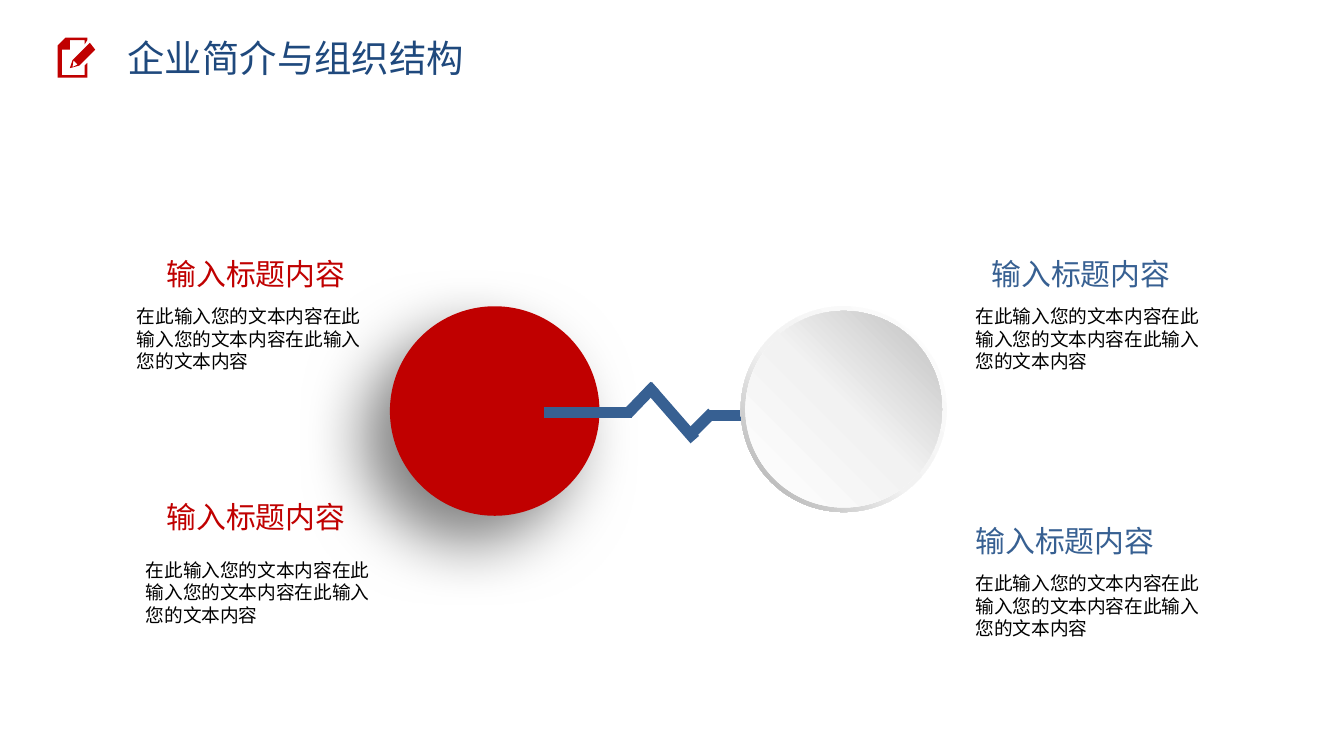
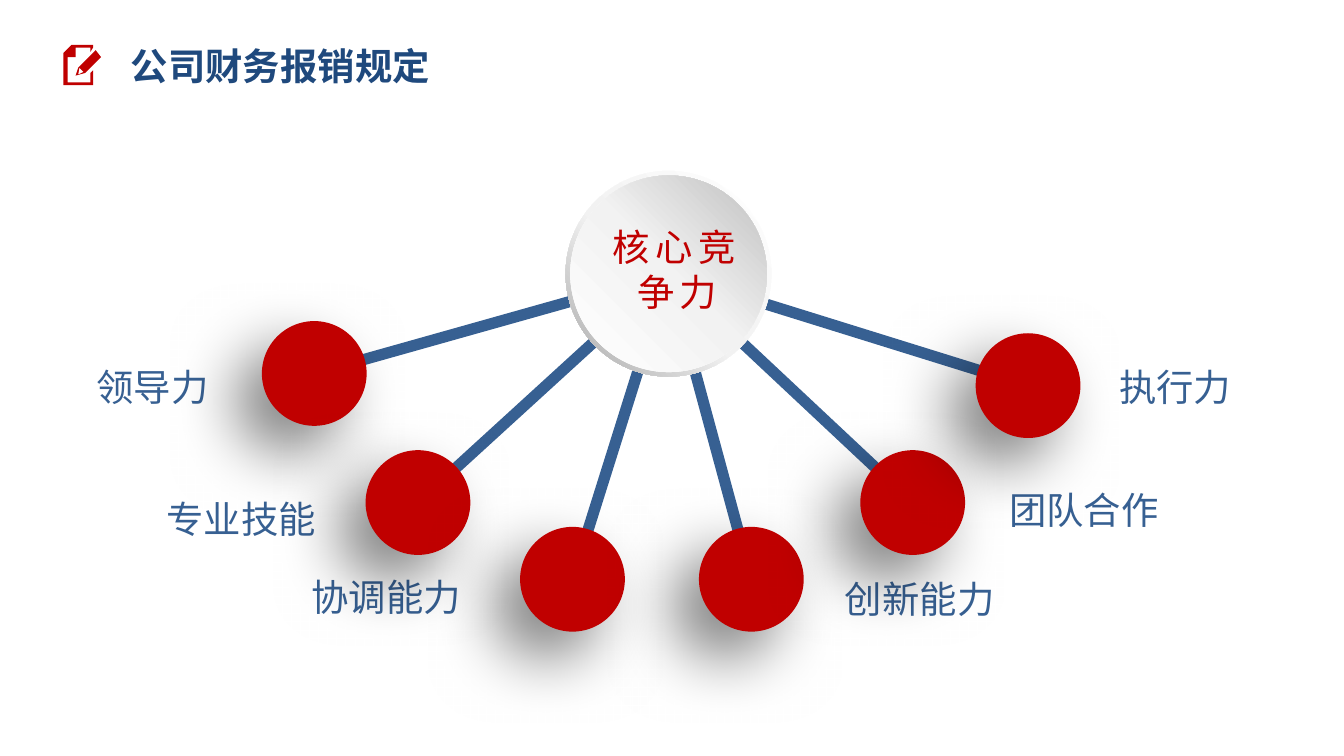
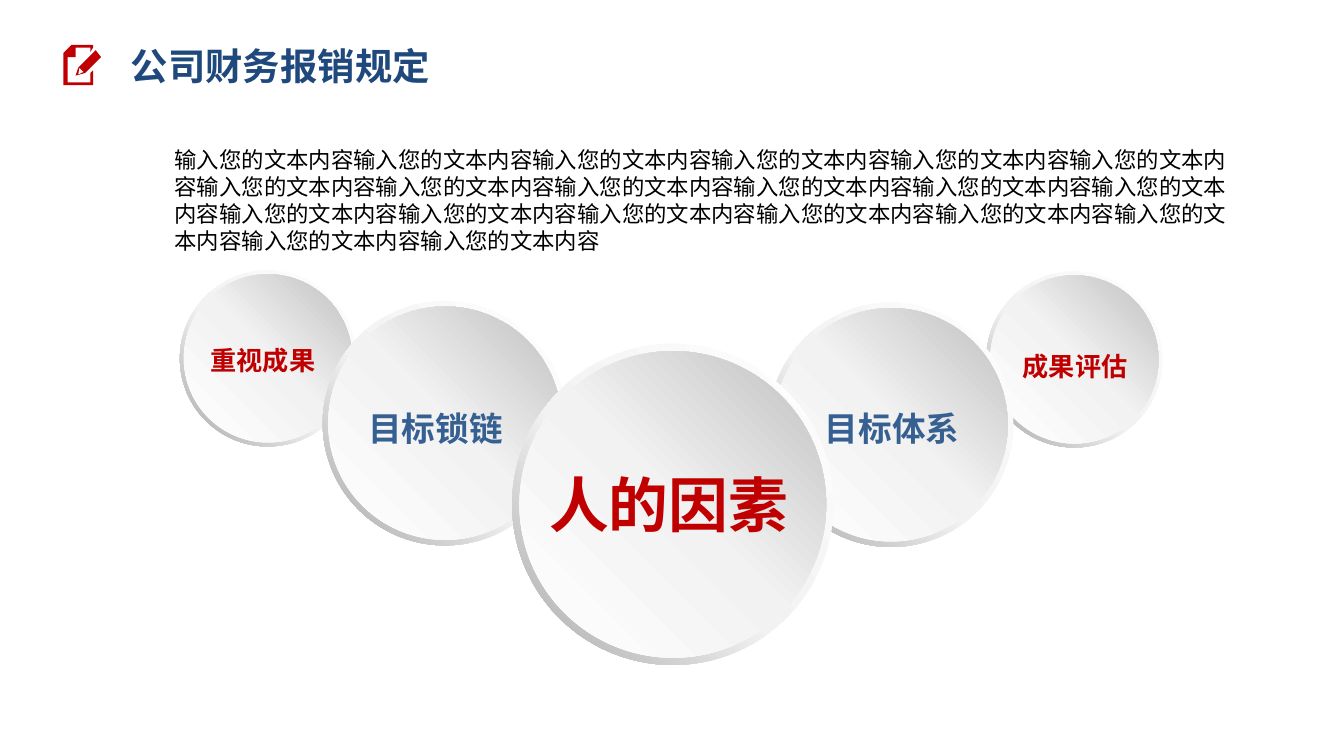
"""Build three slides on company profile, core competence and goal factors."""
from copy import deepcopy

from lxml import etree
from pptx import Presentation
from pptx.dml.color import RGBColor
from pptx.enum.shapes import MSO_CONNECTOR, MSO_SHAPE
from pptx.enum.text import MSO_ANCHOR, MSO_AUTO_SIZE, PP_ALIGN
from pptx.oxml.ns import qn
from pptx.util import Cm, Pt

STRAIGHT = MSO_CONNECTOR.STRAIGHT
OVAL, DONUT = MSO_SHAPE.OVAL, MSO_SHAPE.DONUT
TOP = MSO_ANCHOR.TOP
FIT_SHAPE = MSO_AUTO_SIZE.SHAPE_TO_FIT_TEXT
LEFT, CENTER = PP_ALIGN.LEFT, PP_ALIGN.CENTER

FONT = "Noto Sans CJK SC"
RED = RGBColor(0xC0, 0x00, 0x00)
BLUE = RGBColor(0x37, 0x60, 0x92)
NAVY = RGBColor(0x1F, 0x49, 0x7D)
BLACK = RGBColor(0x00, 0x00, 0x00)
WHITE = RGBColor(0xFF, 0xFF, 0xFF)
PALE = RGBColor(0xF2, 0xF2, 0xF2)
SILVER = RGBColor(0xBF, 0xBF, 0xBF)
GREY = RGBColor(0xA6, 0xA6, 0xA6)
RIM_STOPS = ((0, WHITE), (0.55, PALE), (1, GREY))
FACE_STOPS = ((0, WHITE), (0.51, PALE), (1, SILVER))

PAGE = [[(0.51, 0.71), (0.08, 0.71), (0.08, 0.23), (0.23, 0.23), (0.23, 0.05),
         (0.51, 0.05), (0.51, 0.13), (0.56, 0.05), (0.56, 0), (0.15, 0),
         (0, 0.15), (0, 0.76), (0.56, 0.76), (0.56, 0.48), (0.51, 0.53)]]
PEN = [[(0.28, 0.43), (0.23, 0.58), (0.41, 0.53), (0.71, 0.23), (0.61, 0.1)],
       [(0.38, 0.51), (0.28, 0.56), (0.3, 0.43)]]


def write(frame, text, size, color, bold=False, align=LEFT, wrap=True, spacing=0):
    """Fill a text frame with one formatted paragraph."""
    frame.word_wrap = wrap
    frame.auto_size = FIT_SHAPE
    frame.vertical_anchor = TOP
    paragraph = frame.paragraphs[0]
    paragraph.text = text
    paragraph.alignment = align
    font = paragraph.font
    font.size, font.bold, font.name = Pt(size), bold, FONT
    font.color.rgb = color
    properties = paragraph._p.pPr.find(qn("a:defRPr"))
    etree.SubElement(properties, qn("a:ea"), typeface=FONT)
    if spacing:
        properties.set("spc", str(spacing * 100))


def add_text(shapes, x, y, width, height, text, size, color, **style):
    """Add a text box."""
    box = shapes.add_textbox(Cm(x), Cm(y), Cm(width), Cm(height))
    write(box.text_frame, text, size, color, **style)


def add_round(shapes, kind, x, y, diameter):
    """Add a round shape without outline or shadow."""
    shape = shapes.add_shape(kind, Cm(x), Cm(y), Cm(diameter), Cm(diameter))
    shape.line.fill.background()
    shape.shadow.inherit = False
    return shape


def add_ball(shapes, x, y, diameter):
    """Add a red ball with a soft shadow to its lower left."""
    ball = add_round(shapes, OVAL, x, y, diameter)
    ball.fill.solid()
    ball.fill.fore_color.rgb = RED
    effects = ball._element.spPr.find(qn("a:effectLst"))
    shadow = etree.SubElement(effects, qn("a:outerShdw"), blurRad=str(Pt(35)),
                              dist=str(Pt(20)), dir="8100000", algn="tr", rotWithShape="0")
    tone = etree.SubElement(shadow, qn("a:srgbClr"), val=str(BLACK))
    etree.SubElement(tone, qn("a:alpha"), val="50000")


def fill_gradient(shape, angle, stops):
    """Fill a shape with a linear gradient of three stops."""
    fill = shape.fill
    fill.gradient()
    fill.gradient_angle = angle
    first = fill.gradient_stops[0]._gs
    first.addnext(deepcopy(first))
    for stop, (position, color) in zip(fill.gradient_stops, stops):
        stop.position = position
        stop.color.rgb = color


def add_disc(slide, x, y, diameter):
    """Add a grouped silver disc with a rim and return the group's shapes."""
    shapes = slide.shapes.add_group_shape().shapes
    inset = diameter * 0.0225
    rim = add_round(shapes, DONUT, x, y, diameter)
    rim.adjustments[0] = 0.049
    fill_gradient(rim, 225, RIM_STOPS)
    face = add_round(shapes, OVAL, x + inset, y + inset, diameter - 2 * inset)
    fill_gradient(face, 45, FACE_STOPS)
    return shapes


def add_bar(shapes, x1, y1, x2, y2):
    """Add a thick blue line."""
    bar = shapes.add_connector(STRAIGHT, Cm(x1), Cm(y1), Cm(x2), Cm(y2))
    bar.line.color.rgb = BLUE
    bar.line.width = Pt(6)
    etree.SubElement(bar._element.spPr, qn("a:effectLst"))


def add_outline(shapes, contours, x, y):
    """Add a red freeform made of closed contours."""
    builder = None
    for contour in contours:
        points = [(Cm(px), Cm(py)) for px, py in contour]
        if builder is None:
            builder = shapes.build_freeform(*points[0])
        else:
            builder.move_to(*points[0])
        builder.add_line_segments(points[1:], close=True)
    outline = builder.convert_to_shape(Cm(x), Cm(y))
    outline.fill.solid()
    outline.fill.fore_color.rgb = RED
    outline.line.fill.background()
    outline.shadow.inherit = False


def add_slide(prs, heading, icon_at, title_box, indent=0.25, bold=False):
    """Add a slide with its title and the notepad icon."""
    slide = prs.slides.add_slide(prs.slide_layouts[5])
    title = slide.shapes.title
    title.left, title.top, title.width, title.height = map(Cm, title_box)
    write(title.text_frame, heading, 20, NAVY, bold=bold)
    title.text_frame.margin_left = Cm(indent)
    icon = slide.shapes.add_group_shape().shapes
    for contours in (PAGE, PEN):
        add_outline(icon, contours, *icon_at)
    return slide


def add_rules_slide(prs):
    """Add a slide under the expense rules heading."""
    return add_slide(prs, "公司财务报销规定", (1.2, 0.85), (0.51, 0.69, 9.32, 1.12),
                     indent=1.96, bold=True)


def build_profile(prs):
    """Build the company profile slide."""
    slide = add_slide(prs, "企业简介与组织结构", (1.09, 0.71), (2.16, 0.53, 8.53, 1.12))
    shapes = slide.shapes
    add_ball(shapes, 7.37, 5.79, 3.96)
    pulse = shapes.add_group_shape().shapes
    for ends in ((10.29, 7.8, 11.94, 7.8), (13.39, 7.85, 14.73, 7.85),
                 (11.86, 7.82, 12.37, 7.29), (12.98, 8.28, 13.46, 7.8),
                 (13.13, 8.31, 12.24, 7.29)):
        add_bar(pulse, *ends)
    add_disc(slide, 14, 5.79, 3.89)
    for head_x, head_y, body_x, body_y, color in (
            (2.9, 4.7, 2.34, 5.64, RED), (2.9, 9.3, 2.51, 10.44, RED),
            (18.49, 4.7, 18.19, 5.64, BLUE), (18.19, 9.75, 18.19, 10.69, BLUE)):
        add_text(shapes, head_x, head_y, 3.89, 0.94, "输入标题内容", 16, color, wrap=False)
        add_text(shapes, body_x, body_y, 4.98, 1.52, "在此输入您的文本内容" * 3, 10, BLACK)


def build_competence(prs):
    """Build the core competence slide with its fan of abilities."""
    slide = add_rules_slide(prs)
    shapes = slide.shapes
    hub_x, hub_y, hub_size, ball_size = 10.69, 3.23, 3.89, 1.98
    abilities = (
        ("领导力", 1.57, 6.76, 4.95, 6.07), ("专业技能", 2.9, 9.25, 6.91, 8.51),
        ("协调能力", 5.64, 10.72, 9.83, 9.96), ("创新能力", 15.72, 10.77, 13.21, 9.96),
        ("团队合作", 18.82, 9.09, 16.26, 8.51), ("执行力", 20.9, 6.76, 18.44, 6.3))
    for ability, x, y, _, _ in abilities:
        add_text(shapes, x, y, 0.5 + 0.71 * len(ability), 1.12, ability, 20, BLUE, wrap=False)
    for _, _, _, x, y in abilities:
        add_bar(shapes, x + ball_size / 2, y + ball_size / 2,
                hub_x + hub_size / 2, hub_y + hub_size / 2)
    for _, _, _, x, y in abilities:
        add_ball(shapes, x, y, ball_size)
    hub = add_disc(slide, hub_x, hub_y, hub_size)
    add_text(hub, 11.02, 4.11, 3.56, 1.96, "核心竞争力", 20, RED, align=CENTER, spacing=3)


def build_factors(prs):
    """Build the slide of overlapping goal factors."""
    slide = add_rules_slide(prs)
    add_text(slide.shapes, 3.05, 2.64, 20.68, 2.31, "输入您的文本内容" * 20, 12, BLACK)
    small, medium, large = (3.33, 2.49, 0.86, 14), (4.62, 3.05, 1.02, 18), (6.07, 5.03, 1.63, 32)
    for factor, x, y, label_x, label_y, scale, color in (
            ("成果评估", 18.64, 5.13, 19.08, 6.5, small, RED),
            ("重视成果", 3.4, 5.11, 3.73, 6.38, small, RED),
            ("目标体系", 14.53, 5.72, 15.34, 7.59, medium, BLUE),
            ("目标锁链", 6.1, 5.69, 6.71, 7.59, medium, BLUE),
            ("人的因素", 9.68, 6.5, 10.13, 8.71, large, RED)):
        diameter, width, height, size = scale
        disc = add_disc(slide, x, y, diameter)
        add_text(disc, label_x, label_y, width, height, factor, size, color,
                 bold=True, wrap=False)


def main():
    """Build and save the presentation."""
    prs = Presentation()
    prs.slide_width, prs.slide_height = Cm(25.4), Cm(14.29)
    build_profile(prs)
    build_competence(prs)
    build_factors(prs)
    prs.save("out.pptx")


if __name__ == "__main__":
    main()
